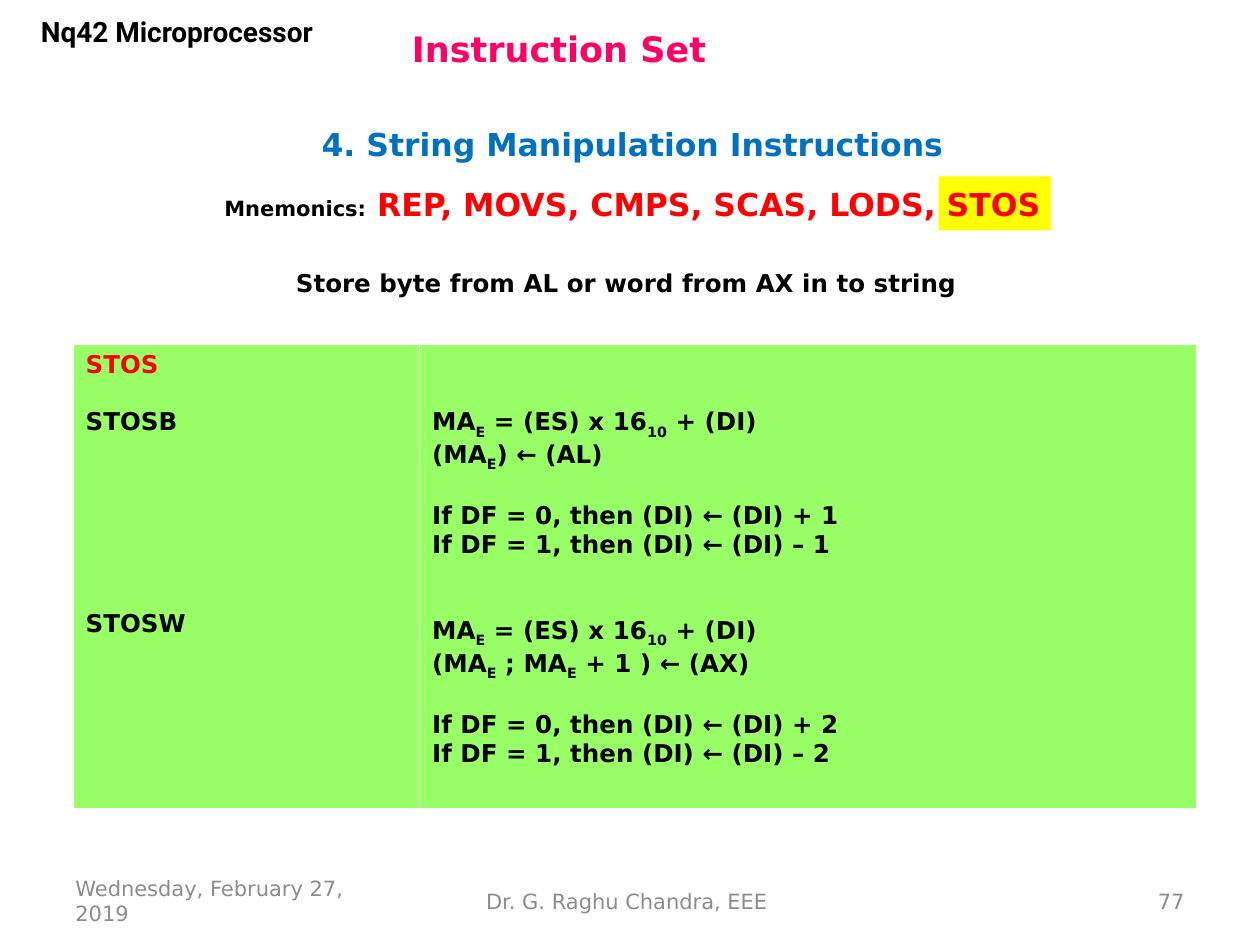
from lxml.etree import SubElement
from pptx import Presentation
from pptx.dml.color import RGBColor
from pptx.enum.shapes import MSO_SHAPE
from pptx.enum.text import MSO_ANCHOR, PP_ALIGN
from pptx.oxml.ns import qn
from pptx.util import Inches, Pt

COLS, ROWS = 100, 75
SANS = "DejaVu Sans"
LINE = 16.5
LEFT, CENTER, RIGHT = PP_ALIGN.LEFT, PP_ALIGN.CENTER, PP_ALIGN.RIGHT
BODY = dict(name=SANS, size=Pt(14), bold=True)

prs = Presentation()
prs.slide_width, prs.slide_height = Inches(10), Inches(7.5)
UX, UY = prs.slide_width / COLS, prs.slide_height / ROWS


def place(box):
    x, y, w, h = box
    return int(x * UX), int(y * UY), int(w * UX), int(h * UY)


def rgb(value):
    return RGBColor.from_string(value)


def set_all(target, values):
    for key, value in values.items():
        setattr(target, key, value)


def add_run(p, text, color, fmt):
    r = p.add_run()
    r.text = text
    set_all(r.font, fmt)
    r.font.color.rgb = rgb(color)
    return r


def text_box(s, box, runs, align=LEFT, anchor=MSO_ANCHOR.TOP, wrap=True):
    tf = s.shapes.add_textbox(*place(box)).text_frame
    set_all(tf, dict(word_wrap=wrap, vertical_anchor=anchor))
    p = tf.paragraphs[0]
    p.alignment = align
    for text, color, size, name, bold in runs:
        add_run(p, text, color, dict(name=name, size=Pt(size), bold=bold))


def header(s, box):
    x, y, w, h = box
    text_box(s, (x, y, 26.7, h), [("Nq42 Microprocessor", "000000", 16, "Roboto", True)], CENTER)
    text_box(s, (x + 31, y + 0.5, w - 31, 5.3), [("Instruction Set", "FF0066", 20, SANS, True)],
             anchor=MSO_ANCHOR.MIDDLE)


def topic(s, box):
    x, y, w, h = box
    sp = s.shapes.add_shape(MSO_SHAPE.RECTANGLE, *place((x + 71.6, y + 4.7, 8.9, 4.3)))
    sp.shadow.inherit = False
    sp.fill.solid()
    sp.fill.fore_color.rgb = rgb("FFFF00")
    sp.line.fill.background()
    text_box(s, (x, y, w, 4.3),
             [("4. String Manipulation Instructions", "0070C0", 18, SANS, True)],
             CENTER, MSO_ANCHOR.MIDDLE)
    text_box(s, (x, y + 4.9, w, 4),
             [("Mnemonics:", "000000", 12, SANS, True),
              (" REP, MOVS, CMPS, SCAS, LODS, STOS", "FF0000", 18, SANS, True)], CENTER)
    text_box(s, (x + 19.6, y + 11.5, 55.1, 3.4),
             [("Store byte from AL or word from AX in to string", "000000", 14, SANS, True)],
             wrap=False)


def border(cell, widths):
    tcPr = cell._tc.get_or_add_tcPr()
    for i, (side, width) in enumerate(widths.items()):
        ln = SubElement(tcPr, qn(f"a:{side}"), w=str(Pt(width)))
        SubElement(SubElement(ln, qn("a:solidFill")), qn("a:srgbClr"), val="FFFFFF")
        tcPr.remove(ln)
        tcPr.insert(i, ln)


def fill_cell(cell, lines, skip=0):
    cell.fill.solid()
    cell.fill.fore_color.rgb = rgb("99FF66")
    cell.margin_top = Inches(0.05) + Pt(skip * LINE)
    border(cell, dict(lnL=1, lnR=1, lnT=1, lnB=3))
    tf = cell.text_frame
    for i, (gap, color, parts) in enumerate(lines):
        p = tf.add_paragraph() if i else tf.paragraphs[0]
        p.space_before = Pt(gap * LINE)
        for j, text in enumerate(parts.split("_")):
            r = add_run(p, text, color, BODY)
            if j % 2:
                r._r.get_or_add_rPr().set("baseline", "-25000")


def operation(gap, target, register, step):
    lines = [(gap, "MA_E_ = (ES) x 16_10_ + (DI)"),
             (0, f"({target}) ← ({register})"),
             (1, f"If DF = 0, then (DI) ← (DI) + {step}"),
             (0, f"If DF = 1, then (DI) ← (DI) – {step}")]
    return [(before, "000000", text) for before, text in lines]


def instruction_table(s, box):
    table = s.shapes.add_table(1, 2, *place(box)).table
    set_all(table, dict(first_row=False, horz_banding=False))
    for column, share in zip(table.columns, (27.5, 61.7)):
        column.width = int(share * UX)
    fill_cell(table.cell(0, 0), [(0, "FF0000", "STOS"), (1, "000000", "STOSB"),
                                 (6, "000000", "STOSW")])
    fill_cell(table.cell(0, 1), operation(0, "MA_E_", "AL", 1)
              + operation(2, "MA_E_ ; MA_E_ + 1 ", "AX", 2), skip=2)


def footer(s, box):
    x, y, w, h = box
    parts = [(0, 23.3, "Wednesday, February 27, 2019", LEFT),
             (28.9, 31.7, "Dr. G. Raghu Chandra, EEE", CENTER),
             (w - 23.3, 23.3, "77", RIGHT)]
    for dx, width, text, align in parts:
        text_box(s, (x + dx, y, width, h), [(text, "8C8C8C", 12, SANS, False)],
                 align, MSO_ANCHOR.MIDDLE)


def main():
    s = prs.slides.add_slide(prs.slide_layouts[6])
    header(s, (0.7, 0.7, 96.8, 6.4))
    topic(s, (2.9, 9.3, 94.6, 15))
    instruction_table(s, (5.8, 27.3, 89.2, 37))
    footer(s, (5, 69.5, 90, 4))
    prs.save("out.pptx")


if __name__ == "__main__":
    main()
